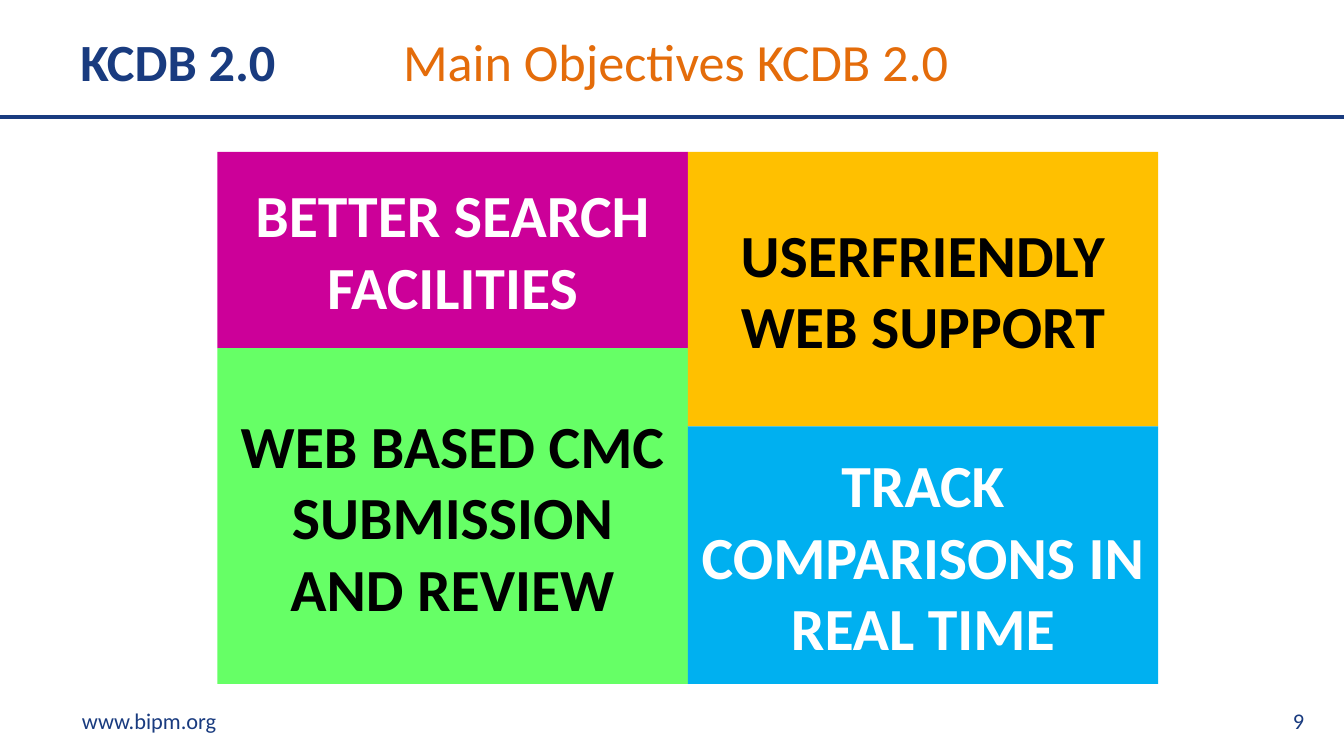
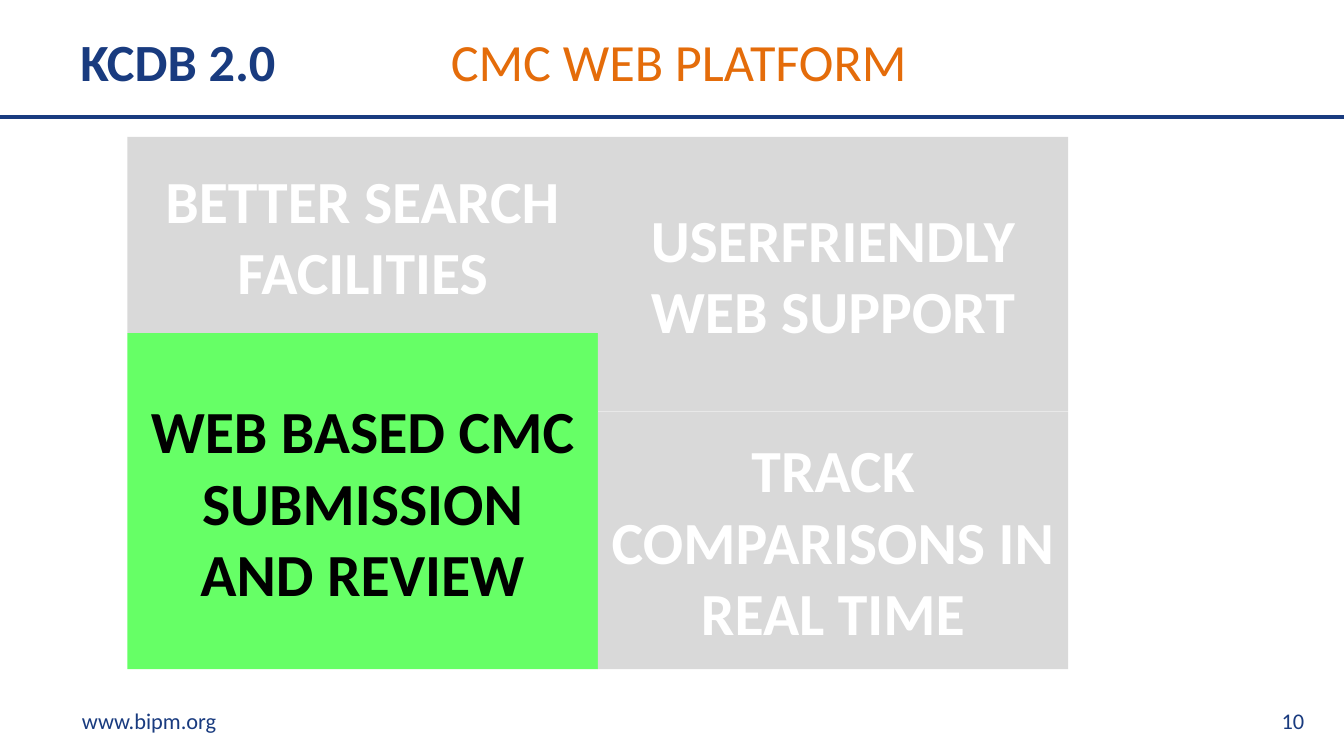
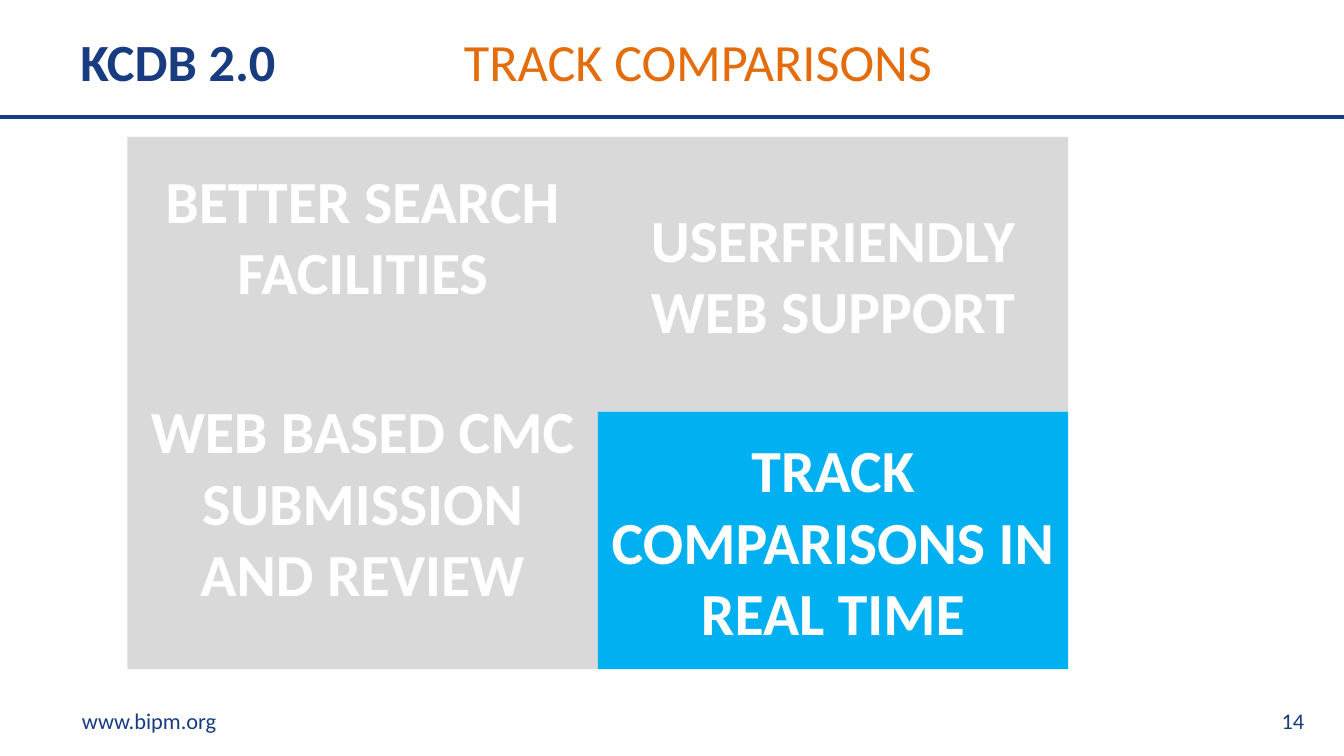
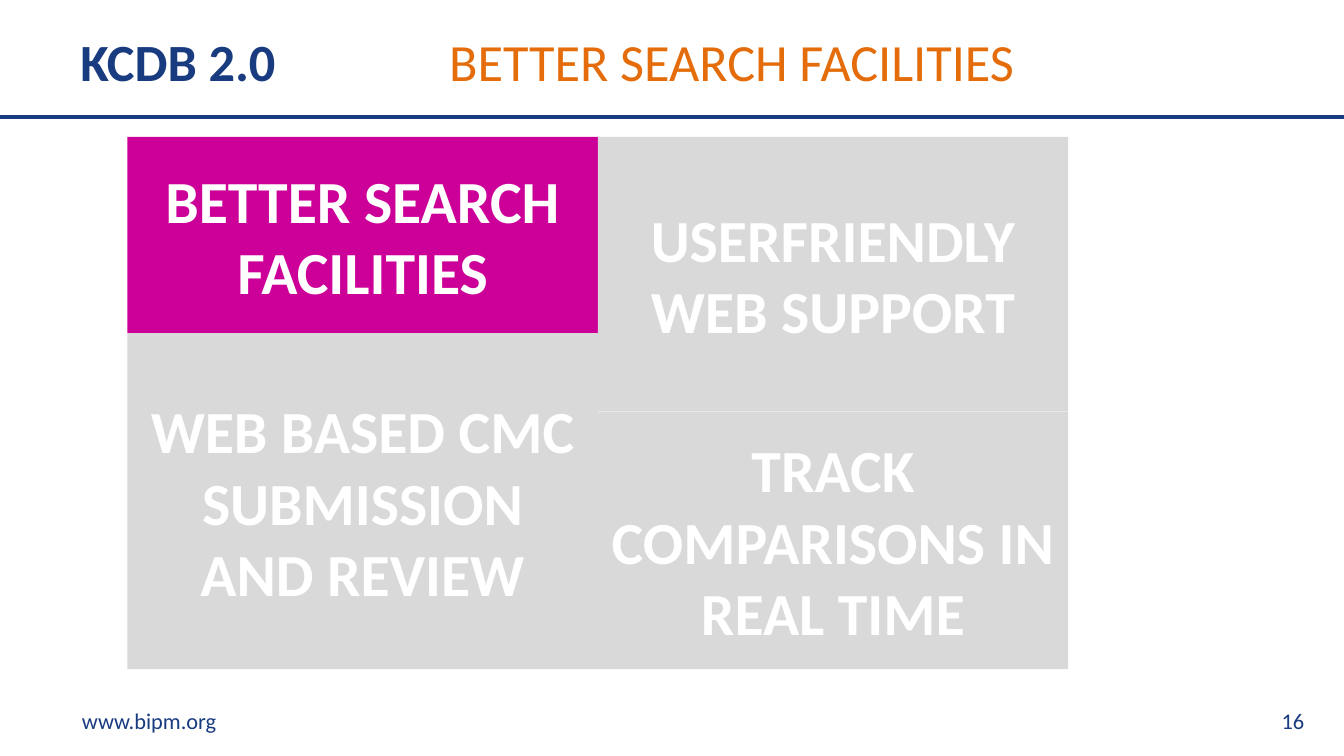
from lxml import etree
from pptx import Presentation
from pptx.dml.color import RGBColor
from pptx.enum.shapes import MSO_CONNECTOR, MSO_SHAPE
from pptx.enum.text import MSO_ANCHOR, PP_ALIGN
from pptx.oxml.ns import qn
from pptx.util import Cm, Pt

LINE = MSO_CONNECTOR.STRAIGHT
RECT = MSO_SHAPE.RECTANGLE
MIDDLE = MSO_ANCHOR.MIDDLE
LEFT, CENTER, RIGHT = PP_ALIGN.LEFT, PP_ALIGN.CENTER, PP_ALIGN.RIGHT

FONT = "Calibri"
NAVY, ORANGE = "193B7F", "E46C0A"
WHITE, BLACK, GREY = "FFFFFF", "000000", "D9D9D9"
WIDTH, HEIGHT = 25.4, 14.29
TILE = 8.89
INSET = 0.25

# Each column holds its tiles from top to bottom: goal, height, fill, ink
GRID = [
    [("BETTER SEARCH FACILITIES", 3.71, "CC0099", WHITE),
     ("WEB BASED CMC SUBMISSION AND REVIEW", 6.35, "66FF66", BLACK)],
    [("USERFRIENDLY WEB SUPPORT", 5.19, "FFC000", BLACK),
     ("TRACK COMPARISONS IN REAL TIME", 4.87, "00B0F0", WHITE)],
]
GOALS = [tile[0] for column in GRID for tile in column]
SEARCH, CMC, _, TRACK = GOALS

# Number, topic, tab stop of the topic, grid corner, goals in colour
SLIDES = [
    (9, "Main Objectives KCDB 2.0", 6.1, (4.11, 2.87), GOALS),
    (10, "CMC WEB PLATFORM", 7, (2.41, 2.59), [CMC]),
    (14, "TRACK COMPARISONS", 7.25, (2.41, 2.59), [TRACK]),
    (16, "BETTER SEARCH FACILITIES", 6.97, (2.41, 2.59), [SEARCH]),
]


def color(value):
    return RGBColor.from_string(value)


def write(shape, text, size=12, ink=NAVY, bold=False, align=LEFT):
    """Add a run to the shape's only paragraph."""
    frame = shape.text_frame
    frame.word_wrap = True
    frame.vertical_anchor = MIDDLE
    frame.margin_left = frame.margin_right = Cm(INSET)
    para = frame.paragraphs[0]
    para.alignment = align
    run = para.add_run()
    run.text = text
    run.font.name = FONT
    run.font.size = Pt(size)
    run.font.bold = bold
    run.font.color.rgb = color(ink)


def add_box(slide, *box):
    return slide.shapes.add_textbox(*map(Cm, box))


def add_head(slide, topic, stop, x, y, w, h):
    """Place the title, its topic set at a tab stop, above a full-width rule."""
    rule = slide.shapes.add_connector(LINE, 0, Cm(y + h), Cm(WIDTH), Cm(y + h))
    rule.line.color.rgb = color(NAVY)
    rule.line.width = Pt(2.25)
    etree.SubElement(rule._element.spPr, qn("a:effectLst"))

    title = add_box(slide, x, y, w, h)
    props = title.text_frame.paragraphs[0]._p.get_or_add_pPr()
    tabs = etree.SubElement(props, qn("a:tabLst"))
    etree.SubElement(tabs, qn("a:tab"), pos=str(Cm(stop)), algn="l")
    write(title, "KCDB 2.0\t", size=28, bold=True)
    write(title, topic, size=28, ink=ORANGE)


def add_foot(slide, number, x, y, w, h):
    part = 4.8
    write(add_box(slide, x, y, part, h), "www.bipm.org")
    write(add_box(slide, x + w - part, y, part, h), str(number), align=RIGHT)


def add_grid(slide, lit, x, y):
    """Stack the goals in two columns; those not lit are grey."""
    for index, column in enumerate(GRID):
        top = y
        for goal, height, fill, ink in column:
            if goal not in lit:
                fill, ink = GREY, WHITE
            box = (x + index * TILE, top, TILE, height)
            tile = slide.shapes.add_shape(RECT, *map(Cm, box))
            tile.shadow.inherit = False
            tile.fill.solid()
            tile.fill.fore_color.rgb = color(fill)
            tile.line.fill.background()
            write(tile, goal, size=32, ink=ink, bold=True, align=CENTER)
            top += height


def main():
    deck = Presentation()
    deck.slide_width, deck.slide_height = Cm(WIDTH), Cm(HEIGHT)
    blank = deck.slide_layouts[6]
    for number, topic, stop, corner, lit in SLIDES:
        slide = deck.slides.add_slide(blank)
        add_head(slide, topic, stop, 1.27, 0.08, 22.86, 2.13)
        add_foot(slide, number, 1.3, 13.23, 23.6, 0.77)
        add_grid(slide, lit, *corner)
    deck.save("out.pptx")


if __name__ == "__main__":
    main()
